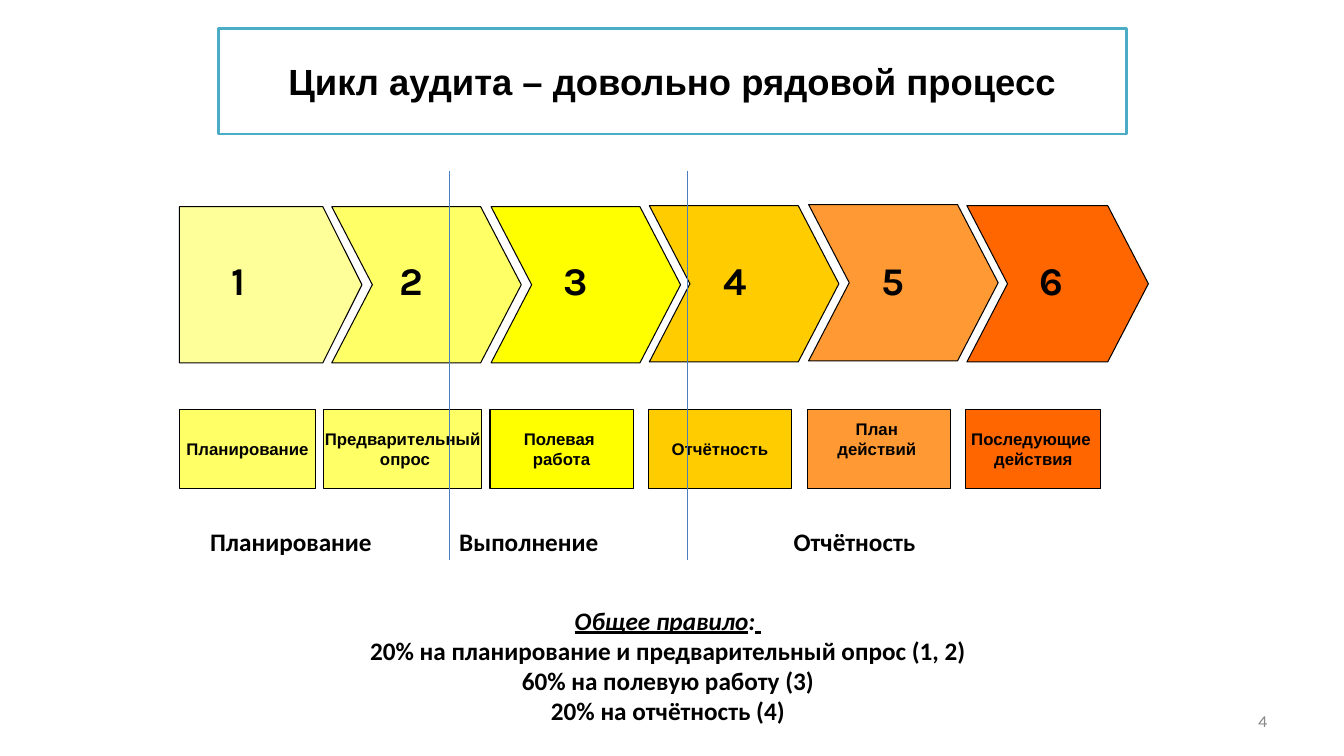
from dataclasses import dataclass

import pptx
import pptx.dml.color
import pptx.enum.shapes
import pptx.enum.text
import pptx.oxml.ns
import pptx.util
from lxml import etree

Inches = pptx.util.Inches
Pt = pptx.util.Pt
Shape = pptx.enum.shapes.MSO_SHAPE
Align = pptx.enum.text.PP_ALIGN
Anchor = pptx.enum.text.MSO_ANCHOR
AutoSize = pptx.enum.text.MSO_AUTO_SIZE

COLORS = {
    "black": "000000", "white": "FFFFFF", "gray": "898989",
    "teal": "4BACC6", "divider": "4B7EBC",
    "cream": "FFFF99", "lemon": "FFFF66", "yellow": "FFFF00",
    "amber": "FFCC00", "orange": "FF9933", "red": "FF6600",
}


@dataclass(frozen=True)
class Box:
    left: float
    top: float
    width: float
    height: float


@dataclass(frozen=True)
class Style:
    font: str
    size: float
    color: str = "black"
    bold: bool = True
    align: Align = Align.CENTER


@dataclass(frozen=True)
class Stage:
    lines: tuple[str, ...]
    arrow: Box
    arrow_color: str
    number_left: float
    label_left: float
    label_width: float
    label_color: str
    label_bottom_margin: float = 0.05


@dataclass(frozen=True)
class Phase:
    name: str
    left: float


STAGES = (
    Stage(("Планирование",), Box(1.78, 2.05, 1.81, 1.55), "cream",
          2.2, 1.78, 1.35, "lemon"),
    Stage(("Предварительный", " опрос"), Box(3.29, 2.05, 1.88, 1.55), "lemon",
          3.86, 3.21, 1.57, "lemon"),
    Stage(("Полевая ", "работа"), Box(4.87, 2.05, 1.88, 1.55), "yellow",
          5.49, 4.86, 1.42, "yellow"),
    Stage(("Отчётность",), Box(6.44, 2.04, 1.88, 1.55), "amber",
          7.08, 6.43, 1.42, "amber"),
    Stage(("План ", "действий "), Box(8.02, 2.03, 1.88, 1.55), "orange",
          8.64, 8.01, 1.42, "orange", 0.26),
    Stage(("Последующие ", "действия"), Box(9.59, 2.04, 1.8, 1.55), "red",
          10.21, 9.58, 1.34, "red"),
)
PHASES = (Phase("Планирование", 1.94), Phase("Выполнение", 4.3), Phase("Отчётность", 7.53))
DIVIDERS = (4.46, 6.82)
RULES = (
    "20% на планирование и предварительный опрос (1, 2)",
    "60% на полевую работу (3)",
    "20% на отчётность (4)",
)

TITLE = Style("Arial", 26)
LABEL = Style("Arial", 12)
NUMBER = Style("Karla", 28, align=Align.LEFT)
BODY = Style("Calibri", 18)
PAGE_NUMBER = Style("Karla", 12, "gray", False, Align.RIGHT)


def rgb(name: str) -> pptx.dml.color.RGBColor:
    return pptx.dml.color.RGBColor.from_string(COLORS[name])


def place(box: Box) -> tuple:
    return tuple(Inches(value) for value in (box.left, box.top, box.width, box.height))


def write(frame, lines: tuple[str, ...], style: Style) -> None:
    """Fill a text frame with one paragraph per line."""
    for index, line in enumerate(lines):
        para = frame.paragraphs[0] if index == 0 else frame.add_paragraph()
        para.text = line
        para.alignment = style.align
        para.font.name = style.font
        para.font.size = Pt(style.size)
        para.font.bold = style.bold
        para.font.color.rgb = rgb(style.color)


def add_figure(page, kind: Shape, box: Box, fill: str, line: str = "black", weight: float = 0.75):
    figure = page.shapes.add_shape(kind, *place(box))
    figure.shadow.inherit = False
    figure.fill.solid()
    figure.fill.fore_color.rgb = rgb(fill)
    figure.line.color.rgb = rgb(line)
    figure.line.width = Pt(weight)
    return figure


def add_text(page, box: Box, lines: tuple[str, ...], style: Style, wrap: bool = True):
    frame = page.shapes.add_textbox(*place(box)).text_frame
    frame.word_wrap = wrap
    frame.auto_size = AutoSize.SHAPE_TO_FIT_TEXT
    write(frame, lines, style)
    return frame


def add_stage(page, number: int, stage: Stage) -> None:
    kind = Shape.PENTAGON if number == 1 else Shape.CHEVRON
    arrow = add_figure(page, kind, stage.arrow, stage.arrow_color)
    arrow.adjustments[0] = 0.25 if number == 1 else 0.26
    add_text(page, Box(stage.number_left, 2.49, 0.45, 0.57), (str(number),), NUMBER, False)

    box = Box(stage.label_left, 4.06, stage.label_width, 0.79)
    frame = add_figure(page, Shape.RECTANGLE, box, stage.label_color).text_frame
    frame.word_wrap = False
    frame.vertical_anchor = Anchor.MIDDLE
    frame.margin_bottom = Inches(stage.label_bottom_margin)
    write(frame, stage.lines, LABEL)


def add_divider(page, x: float) -> None:
    divider = page.shapes.add_connector(
        pptx.enum.shapes.MSO_CONNECTOR.STRAIGHT, Inches(x), Inches(1.7), Inches(x), Inches(5.56))
    divider.line.color.rgb = rgb("divider")
    divider.line.width = Pt(0.75)
    etree.SubElement(divider._element.spPr, pptx.oxml.ns.qn("a:effectLst"))


def add_rules(page) -> None:
    frame = add_text(page, Box(1.86, 5.64, 9.53, 1.62), ("",) + RULES, BODY)
    frame.margin_top = Inches(0.36)
    heading = frame.paragraphs[0]
    heading.font.italic = True
    for text, underline in (("Общее правило", True), (":", False), (" ", True)):
        span = heading.add_run()
        span.text = text
        # Runs do not take paragraph-level fonts in every viewer
        span.font.name = BODY.font
        span.font.size = Pt(BODY.size)
        span.font.bold = True
        span.font.italic = True
        span.font.underline = underline
        span.font.color.rgb = rgb(BODY.color)


def main() -> None:
    deck = pptx.Presentation()
    deck.slide_width = Inches(13.33)
    deck.slide_height = Inches(7.5)
    page = deck.slides.add_slide(deck.slide_layouts[6])

    title = add_figure(page, Shape.RECTANGLE, Box(2.17, 0.28, 9, 1.05), "white", "teal", 2)
    title.text_frame.vertical_anchor = Anchor.MIDDLE
    write(title.text_frame, ("Цикл аудита – довольно рядовой процесс",), TITLE)

    for number, stage in enumerate(STAGES, start=1):
        add_stage(page, number, stage)
    for x in DIVIDERS:
        add_divider(page, x)
    for phase in PHASES:
        add_text(page, Box(phase.left, 5.17, 1.89, 0.4), (phase.name,), BODY)
    add_rules(page)

    footer = add_text(page, Box(9.56, 6.95, 3.11, 0.4), ("4",), PAGE_NUMBER)
    footer.auto_size = AutoSize.NONE
    footer.vertical_anchor = Anchor.MIDDLE
    deck.save("out.pptx")


if __name__ == "__main__":
    main()
